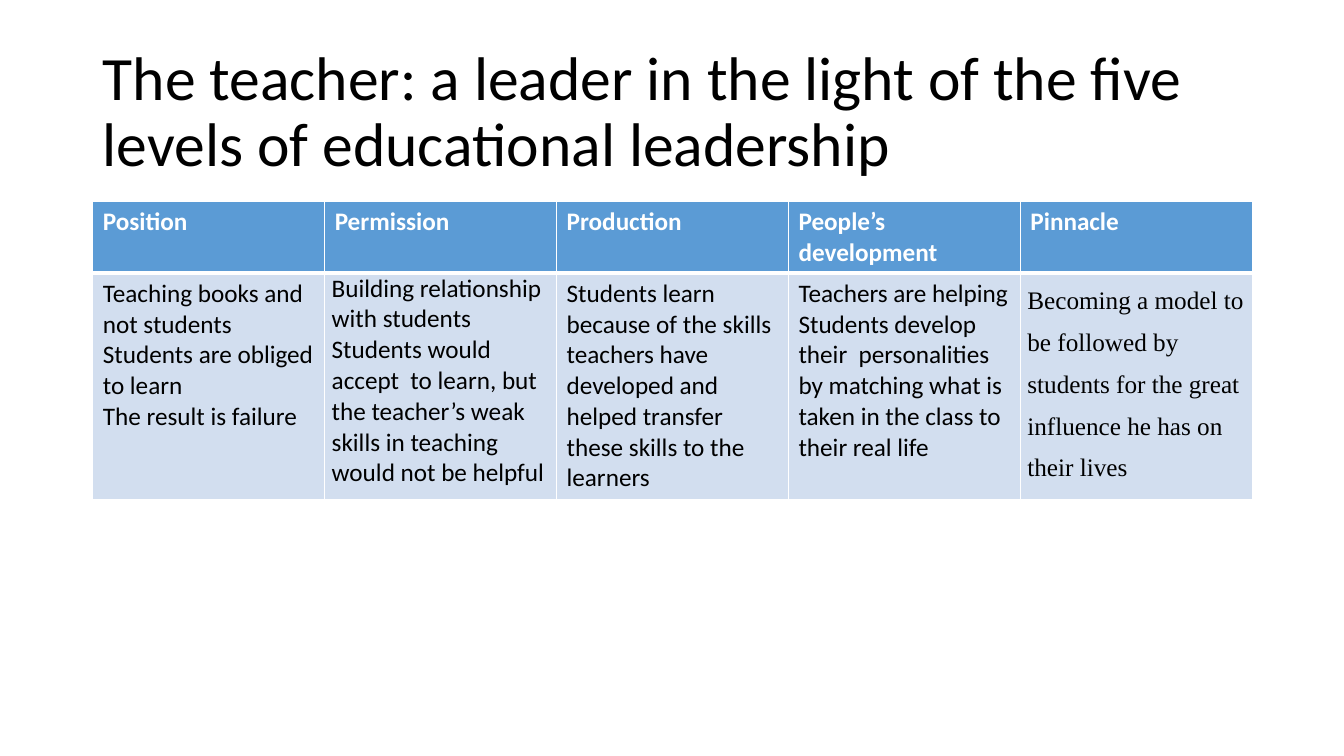
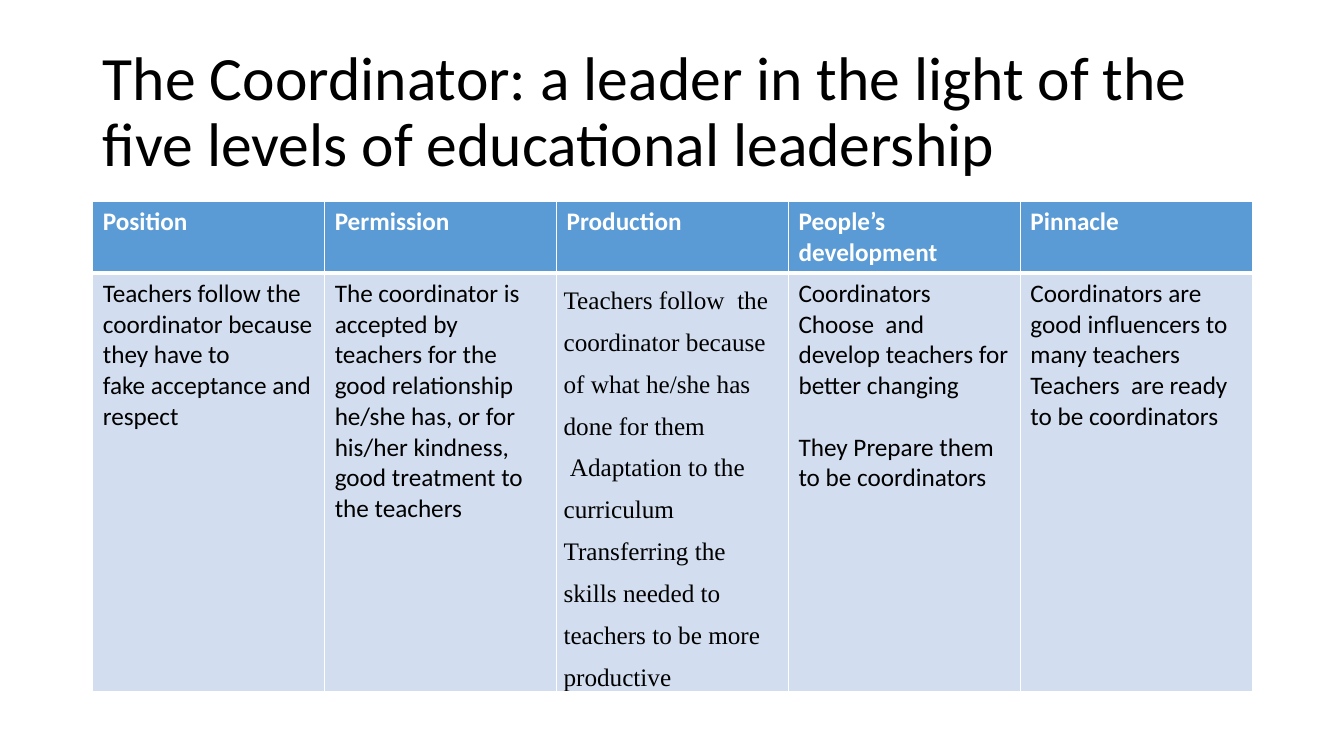
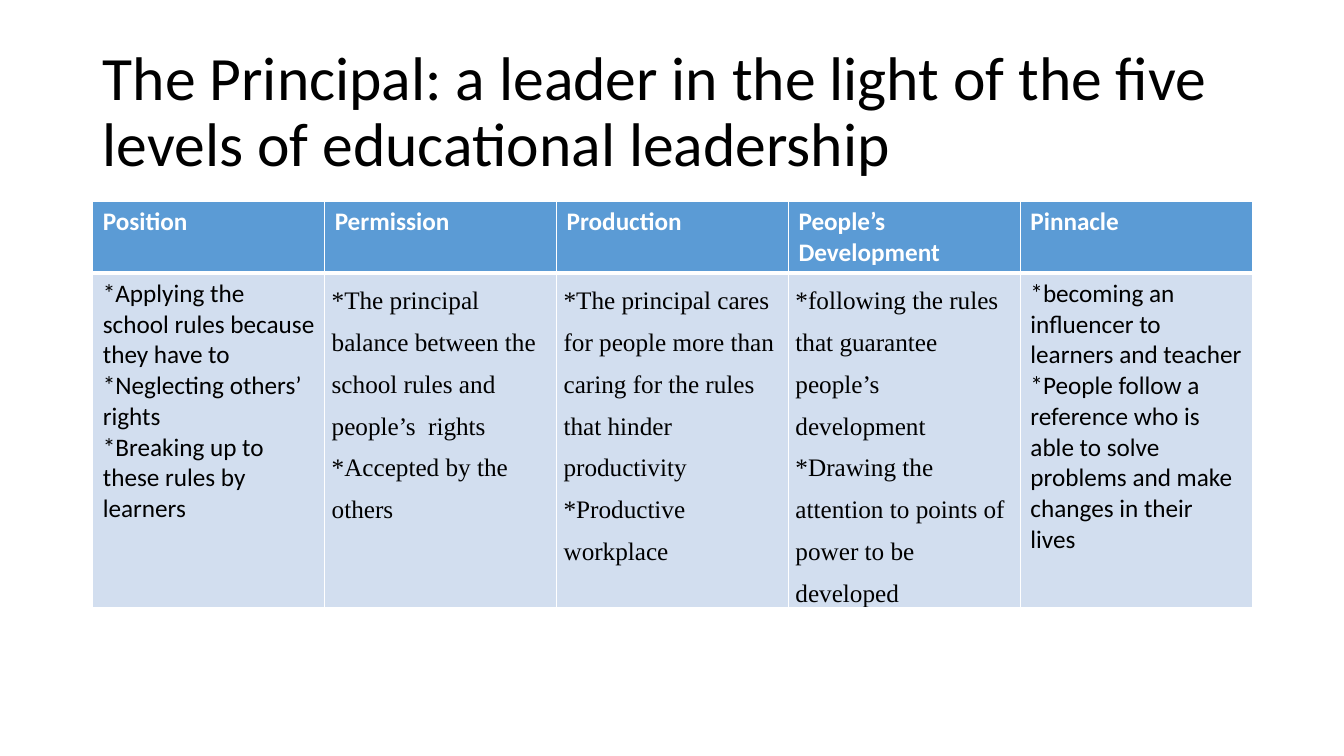
import pptx
import pptx.util
import pptx.dml.color
import pptx.enum.text
import pptx.oxml.ns
import lxml.etree

COLOURS = {"ink": "000000", "paper": "FFFFFF", "header": "5B9BD5", "body": "D2DEEF"}

# Cell styles: font, paragraph and margin (inches) values
WIDE = {"margin_left": 0.1, "margin_right": 0.1, "margin_top": 0.05, "margin_bottom": 0.05}
TIGHT = {"margin_left": 0.07, "margin_right": 0.07, "margin_top": 0, "margin_bottom": 0}
SANS = {"name": "Calibri", "size": 18, "bold": False, "colour": "ink"}
STYLES = {
    "title": {"font": {**SANS, "size": 44}, "para": {"line_spacing": 0.9}, "margins": WIDE},
    "header": {"font": {**SANS, "bold": True, "colour": "paper"}, "para": {}, "margins": WIDE},
    "plain": {"font": SANS, "para": {}, "margins": WIDE},
    "tight": {"font": SANS, "para": {}, "margins": TIGHT},
    "serif": {"font": {**SANS, "name": "Times New Roman"},
              "para": {"line_spacing": 1.5}, "margins": TIGHT},
}


class LevelsDeck:
    """Holds the grid, the styles and the current slide."""

    width, height = 13.33, 7.5
    left, column, row = 0.92, 2.3, 0.05  # inches

    def __init__(self):
        self.deck = pptx.Presentation()
        self.deck.slide_width = pptx.util.Inches(self.width)
        self.deck.slide_height = pptx.util.Inches(self.height)
        self.page = None

    def place(self, top, columns, rows):
        """Turn grid rows and columns into left, top, width, height."""
        lengths = (self.left, top * self.row, columns * self.column, rows * self.row)
        return [pptx.util.Inches(length) for length in lengths]

    def add_page(self, title):
        self.page = self.deck.slides.add_slide(self.deck.slide_layouts[5])
        box = self.page.shapes.title
        box.left, box.top, box.width, box.height = self.place(top=8, columns=5, rows=29)
        frame = box.text_frame
        frame.auto_size = pptx.enum.text.MSO_AUTO_SIZE.NONE
        frame.vertical_anchor = pptx.enum.text.MSO_ANCHOR.MIDDLE
        self.add_text(frame, [title], "title")

    def add_text(self, frame, paragraphs, style_name):
        """Fill a text frame; a paragraph is text, or text with its own format."""
        style = STYLES[style_name]
        frame.word_wrap = True
        for index, item in enumerate(paragraphs):
            text, extra = item if isinstance(item, tuple) else (item, {})
            para = frame.paragraphs[0] if index == 0 else frame.add_paragraph()
            para.text = text
            para.alignment = pptx.enum.text.PP_ALIGN.LEFT
            extra = dict(extra)
            indent = extra.pop("indent", None)
            for key, value in {**style["para"], **extra}.items():
                setattr(para, key, value)
            if indent is not None:
                para._p.get_or_add_pPr().set("indent", str(indent))
            for span in para.runs:
                self.format_font(span.font, style["font"])

    def format_font(self, font, values):
        for key, value in values.items():
            if key == "colour":
                font.color.rgb = pptx.dml.color.RGBColor.from_string(COLOURS[value])
            else:
                setattr(font, key, pptx.util.Pt(value) if key == "size" else value)

    def add_borders(self, cell, widths):
        """Draw white borders; widths are points for left, right, top, bottom."""
        properties = cell._tc.get_or_add_tcPr()
        qn = pptx.oxml.ns.qn
        for side, points in zip("LRTB", widths):
            line = lxml.etree.SubElement(properties, qn("a:ln" + side), w=str(pptx.util.Pt(points)))
            fill = lxml.etree.SubElement(line, qn("a:solidFill"))
            lxml.etree.SubElement(fill, qn("a:srgbClr"), val=COLOURS["paper"])

    def fill_cell(self, cell, paragraphs, style_name, fill, borders):
        self.add_text(cell.text_frame, paragraphs, style_name)
        for key, value in STYLES[style_name]["margins"].items():
            setattr(cell, key, pptx.util.Inches(value))
        self.add_borders(cell, borders)
        cell.fill.solid()
        cell.fill.fore_color.rgb = pptx.dml.color.RGBColor.from_string(COLOURS[fill])

    def add_levels(self, headings, cells, body_rows):
        row_counts = (14, body_rows)
        area = self.place(top=40, columns=len(headings), rows=sum(row_counts))
        table = self.page.shapes.add_table(2, len(headings), *area).table
        table.horz_banding = False
        for table_row, count in zip(table.rows, row_counts):
            table_row.height = pptx.util.Inches(count * self.row)
        for index, (heading, (style_name, paragraphs)) in enumerate(zip(headings, cells)):
            table.columns[index].width = pptx.util.Inches(self.column)
            self.fill_cell(table.cell(0, index), [heading], "header", "header", (1, 1, 1, 3))
            self.fill_cell(table.cell(1, index), paragraphs, style_name, "body", (1, 1, 3, 1))


# Slide content: role, fourth heading, body height in grid rows, body cells
PAGES = [
    ("teacher", "People’s development", 45, [
        ("plain", ["Teaching books and not students",
                   "Students are obliged to learn",
                   "The result is failure"]),
        ("tight", ["Building relationship with students",
                   "Students would accept  to learn, but the teacher’s weak skills in "
                   "teaching would not be helpful"]),
        ("plain", ["Students learn because of the skills teachers have  developed and "
                   "helped transfer these skills to the learners"]),
        ("plain", ["Teachers are helping Students develop their  personalities by "
                   "matching what is taken in the class to their real life"]),
        ("serif", ["Becoming a model to be followed by students for the great influence "
                   "he has on their lives"]),
    ]),
    ("Coordinator", "People’s development", 83, [
        ("plain", ["Teachers follow the coordinator because they have to",
                   "fake acceptance and respect"]),
        ("plain", ["The coordinator is accepted by teachers for the good relationship "
                   "he/she has, or for his/her kindness, good treatment to the teachers"]),
        ("serif", ["Teachers follow  the coordinator because of what he/she has done for them",
                   ("Adaptation to the curriculum", {"indent": pptx.util.Pt(4.5)}),
                   "Transferring the skills needed to teachers to be more productive"]),
        ("plain", ["Coordinators Choose  and develop teachers for better changing",
                   ("They Prepare them to be coordinators",
                    {"space_before": pptx.util.Pt(22)})]),
        ("plain", ["Coordinators are good influencers to many teachers",
                   "Teachers  are ready to be coordinators"]),
    ]),
    ("Principal", "People’s Development", 66, [
        ("plain", ["*Applying the\vschool rules because they have to",
                   "*Neglecting others’ rights",
                   "*Breaking up to these rules by learners"]),
        ("serif", ["*The principal balance between the school rules and people’s  rights",
                   "*Accepted by the others"]),
        ("serif", ["*The principal cares for people more than caring for the rules that "
                   "hinder productivity",
                   "*Productive workplace"]),
        ("serif", ["*following the rules that guarantee people’s development",
                   "*Drawing the attention to points of power to be developed"]),
        ("plain", ["*becoming an influencer to learners and teacher",
                   "*People follow a reference who is able to solve problems and make "
                   "changes in their lives"]),
    ]),
]


def main():
    levels = LevelsDeck()
    for role, development, body_rows, cells in PAGES:
        levels.add_page(f"The {role}: a leader in the light of the five levels "
                        "of educational leadership")
        headings = ["Position", "Permission", "Production", development, "Pinnacle"]
        levels.add_levels(headings, cells, body_rows)
    levels.deck.save("out.pptx")


if __name__ == "__main__":
    main()
